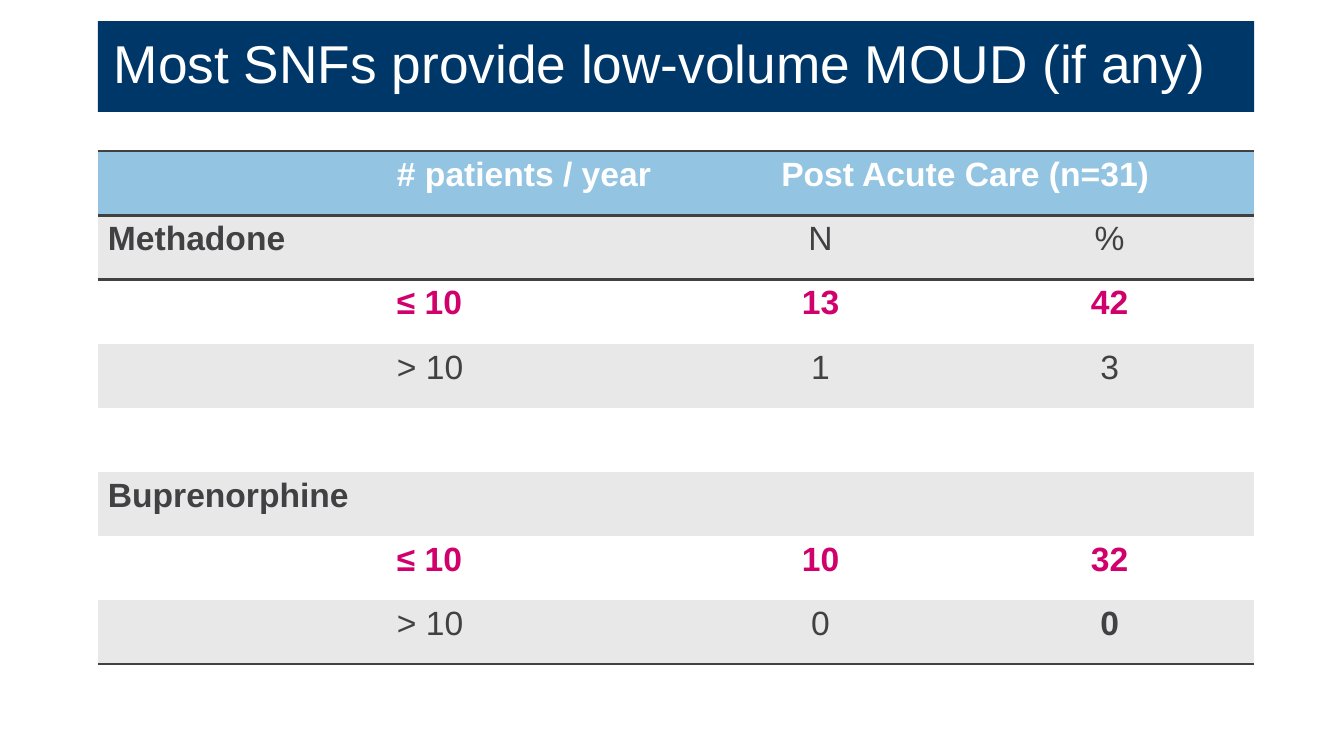
from dataclasses import dataclass

from lxml import etree
from pptx import Presentation
from pptx.dml.color import RGBColor
from pptx.enum.text import MSO_ANCHOR, MSO_AUTO_SIZE, PP_ALIGN
from pptx.oxml.ns import qn
from pptx.util import Inches, Pt

LEFT, CENTER = PP_ALIGN.LEFT, PP_ALIGN.CENTER
MIDDLE = MSO_ANCHOR.MIDDLE
NO_AUTOFIT = MSO_AUTO_SIZE.NONE
TITLE_ONLY = 5
PLAIN_TABLE_STYLE = "{2D5ABB26-0587-4C30-8999-92F81FD0307C}"


@dataclass(frozen=True)
class Theme:
    font: str = "Arial"
    title_size: float = 38
    table_size: float = 24
    rule_width: float = 2
    navy: str = "003769"
    sky: str = "93C5E3"
    band: str = "E9E8E9"
    white: str = "FFFFFF"
    ink: str = "414042"
    accent: str = "D0006C"


THEME = Theme()
SLIDE_WIDTH, SLIDE_HEIGHT = 13.33, 7.5
MARGIN = 0.97
CONTENT_WIDTH = 11.47
TITLE_BOX = (MARGIN, 0.21, CONTENT_WIDTH, 0.9)
TABLE_BOX = (MARGIN, 1.5, CONTENT_WIDTH, 5.09)

TITLE = "Most SNFs provide low-volume MOUD (if any)"
ROWS = [
    ["", "# patients / year", "Post Acute Care (n=31)", ""],
    ["Methadone", "", "N", "%"],
    ["", "≤ 10", "13", "42"],
    ["", "> 10", "1", "3"],
    ["", "", "", ""],
    ["Buprenorphine", "", "", ""],
    ["", "≤ 10", "10", "32"],
    ["", "> 10", "0", "0"],
]
HEADER_ROW = 0
DRUG_ROWS = (1, 5)
HIGHLIGHT_ROWS = (2, 6)
LAST_ROW = len(ROWS) - 1
BOLD_CELL = (LAST_ROW, 3)


def add_run(paragraph, text, size, color, bold=False):
    run = paragraph.add_run()
    run.text = text
    run.font.name = THEME.font
    run.font.size = Pt(size)
    run.font.bold = bold
    run.font.color.rgb = RGBColor.from_string(color)


def fill_solid(fill, color):
    fill.solid()
    fill.fore_color.rgb = RGBColor.from_string(color)


def add_rule(cell, side):
    """Draw a border on one side ("T" or "B"); call before filling the cell."""
    properties = cell._tc.get_or_add_tcPr()
    line = etree.SubElement(properties, qn(f"a:ln{side}"), w=str(Pt(THEME.rule_width)))
    solid = etree.SubElement(line, qn("a:solidFill"))
    etree.SubElement(solid, qn("a:srgbClr"), val=THEME.ink)


def build_title(slide, box):
    title = slide.shapes.title
    title.left, title.top, title.width, title.height = map(Inches, box)
    fill_solid(title.fill, THEME.navy)
    frame = title.text_frame
    frame.auto_size = NO_AUTOFIT
    frame.word_wrap = True
    frame.vertical_anchor = MIDDLE
    frame.margin_left = frame.margin_right = Inches(0.16)
    frame.margin_top = frame.margin_bottom = Inches(0.16)
    paragraph = frame.paragraphs[0]
    paragraph.alignment = LEFT
    paragraph.line_spacing = 0.9
    add_run(paragraph, TITLE, THEME.title_size, THEME.white)


def row_colors(row):
    """Return the fill and the text colour of a table row."""
    if row == HEADER_ROW:
        return THEME.sky, THEME.white
    fill = THEME.band if row % 2 else THEME.white
    return fill, THEME.accent if row in HIGHLIGHT_ROWS else THEME.ink


def is_bold(row, column):
    return (row == HEADER_ROW or row in HIGHLIGHT_ROWS
            or (row in DRUG_ROWS and column == 0) or (row, column) == BOLD_CELL)


def format_cell(cell, row, column, text):
    fill, color = row_colors(row)
    if row == HEADER_ROW:
        add_rule(cell, "T")
    if row == HEADER_ROW + 1:
        add_rule(cell, "T")
    if row in (HEADER_ROW, LAST_ROW):
        add_rule(cell, "B")
    fill_solid(cell.fill, fill)
    if text:
        paragraph = cell.text_frame.paragraphs[0]
        paragraph.alignment = CENTER if column >= 2 else LEFT
        add_run(paragraph, text, THEME.table_size, color, is_bold(row, column))


def build_table(slide, box):
    left, top, width, height = map(Inches, box)
    row_count, column_count = len(ROWS), len(ROWS[0])
    table = slide.shapes.add_table(row_count, column_count, left, top, width, height).table
    table._tbl.tblPr.find(qn("a:tableStyleId")).text = PLAIN_TABLE_STYLE
    for column in table.columns:
        column.width = width // column_count
    for row in table.rows:
        row.height = height // row_count
    for row, texts in enumerate(ROWS):
        for column, text in enumerate(texts):
            format_cell(table.cell(row, column), row, column, text)
    table.cell(HEADER_ROW, 2).merge(table.cell(HEADER_ROW, 3))
    for row in DRUG_ROWS:
        table.cell(row, 0).merge(table.cell(row, 1))


def main():
    presentation = Presentation()
    presentation.slide_width = Inches(SLIDE_WIDTH)
    presentation.slide_height = Inches(SLIDE_HEIGHT)
    slide = presentation.slides.add_slide(presentation.slide_layouts[TITLE_ONLY])
    build_title(slide, TITLE_BOX)
    build_table(slide, TABLE_BOX)
    presentation.save("out.pptx")


if __name__ == "__main__":
    main()
